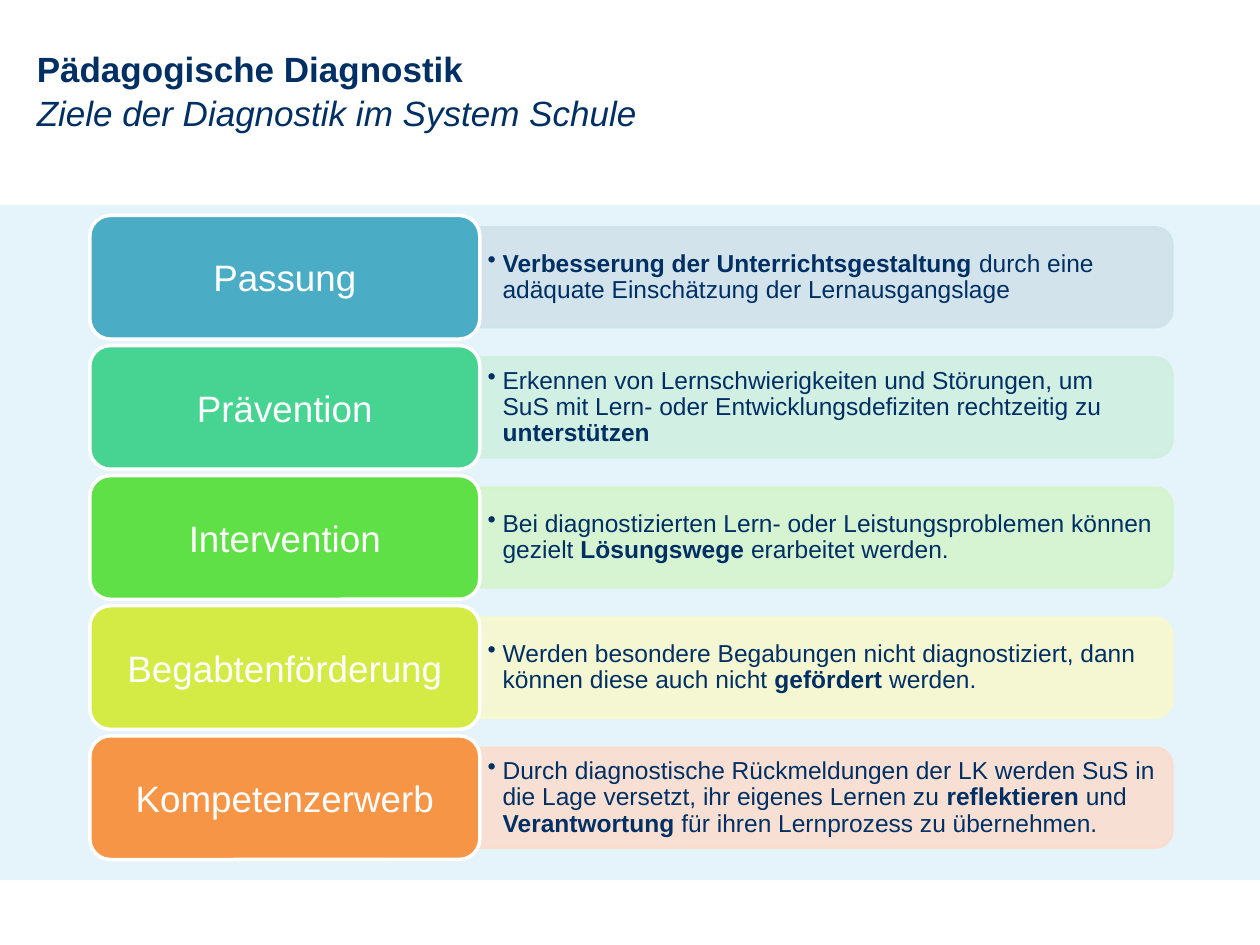
"""Build the slide on the goals of diagnostics in the school system."""
from lxml.etree import SubElement
from pptx import Presentation
from pptx.dml.color import RGBColor
from pptx.enum.shapes import MSO_SHAPE
from pptx.enum.text import MSO_ANCHOR, PP_ALIGN
from pptx.oxml.ns import qn
from pptx.util import Pt

NAVY, WHITE = "002F63", "FFFFFF"
FRAME = dict(margin_left=0, margin_top=0, margin_right=0, margin_bottom=0, word_wrap=True)
TITLE_FONT = dict(name="Arial", size=Pt(20))
GOAL_FONT = dict(name="Arial", size=Pt(21))
DETAIL_FONT = dict(name="Arial", size=Pt(14))

ROW_PITCH, FIRST_TOP = 74.35, 123.1
CARD_LEFT, CARD_WIDTH, CARD_HEIGHT = 51.3, 222.9, 70.7
PANEL_WIDTH, PANEL_HEIGHT = 395.4, 56.5
PANEL_LEFT = CARD_LEFT + CARD_WIDTH
CORNER = 0.167

GOALS = [
    ("Passung", "4AACC5", "D0E2EA", 348.5, [
        ("Verbesserung der Unterrichtsgestaltung ", True),
        ("durch eine adäquate Einschätzung der Lernausgangslage", False)]),
    ("Prävention", "47D391", "CFEFE0", 376, [
        ("Erkennen von Lernschwierigkeiten und Störungen, um SuS mit Lern- oder "
         "Entwicklungsdefiziten rechtzeitig zu ", False),
        ("unterstützen", True)]),
    ("Intervention", "5FE046", "D5F4CE", 384, [
        ("Bei diagnostizierten Lern- oder Leistungsproblemen können gezielt ", False),
        ("Lösungswege ", True),
        ("erarbeitet werden.", False)]),
    ("Begabtenförderung", "D4EB46", "F6F8CE", 372, [
        ("Werden besondere Begabungen nicht diagnostiziert, dann können diese auch nicht ", False),
        ("gefördert ", True),
        ("werden.", False)]),
    ("Kompetenzerwerb", "F79546", "FBDDCF", 384, [
        ("Durch diagnostische Rückmeldungen der LK werden SuS in die Lage versetzt, "
         "ihr eigenes Lernen zu ", False),
        ("reflektieren ", True),
        ("und ", False),
        ("Verantwortung ", True),
        ("für ihren Lernprozess zu übernehmen.", False)]),
]


def rgb(hex_code):
    """Turn a hex string into a colour."""
    return RGBColor.from_string(hex_code)


def apply(target, values):
    """Set each named value on the target."""
    for name, value in values.items():
        setattr(target, name, value)


def add_block(slide, kind, box, fill, line=None, opacity=100):
    """Add a filled preset shape, optionally outlined and translucent."""
    block = slide.shapes.add_shape(kind, *map(Pt, box))
    block.shadow.inherit = False
    block.fill.solid()
    block.fill.fore_color.rgb = rgb(fill)
    if opacity < 100:
        colour = block.fill._xPr.find(qn("a:solidFill"))[0]
        SubElement(colour, qn("a:alpha"), val=str(opacity * 1000))
    if line:
        block.line.color.rgb = rgb(line)
        block.line.width = Pt(2)
    else:
        block.line.fill.background()
    return block


def add_run(paragraph, text, font, colour, **emphasis):
    """Append formatted text to a paragraph."""
    run = paragraph.add_run()
    run.text = text
    apply(run.font, {**font, **emphasis})
    run.font.color.rgb = rgb(colour)


def add_frame(slide, box, anchor):
    """Add a wrapping text box without margins and return its frame."""
    frame = slide.shapes.add_textbox(*map(Pt, box)).text_frame
    apply(frame, {**FRAME, "vertical_anchor": anchor})
    return frame


def add_title(slide):
    """Add the two-line heading."""
    frame = add_frame(slide, (21, 27, 400, 50), MSO_ANCHOR.TOP)
    add_run(frame.paragraphs[0], "Pädagogische Diagnostik", TITLE_FONT, NAVY, bold=True)
    subtitle = frame.add_paragraph()
    subtitle.space_before = Pt(1)
    add_run(subtitle, "Ziele der Diagnostik im System Schule", TITLE_FONT, NAVY, italic=True)


def add_panel(slide, top, tint):
    """Add the pale panel, turned so that its right corners are round."""
    shift = (PANEL_WIDTH - PANEL_HEIGHT) / 2
    box = (PANEL_LEFT + shift, top - shift, PANEL_HEIGHT, PANEL_WIDTH)
    panel = add_block(slide, MSO_SHAPE.ROUND_2_SAME_RECTANGLE, box, tint, tint, 90)
    panel.adjustments[0] = CORNER
    panel.rotation = 90


def add_detail(slide, top, width, parts):
    """Add the bulleted explanation over its panel."""
    frame = add_frame(slide, (PANEL_LEFT + 3, top, width, PANEL_HEIGHT), MSO_ANCHOR.MIDDLE)
    detail = frame.paragraphs[0]
    properties = detail._p.get_or_add_pPr()
    apply_indent = {"marL": Pt(10), "indent": Pt(-8.6)}
    for name, value in apply_indent.items():
        properties.set(name, str(value))
    SubElement(properties, qn("a:buChar"), char="•")
    detail.line_spacing = Pt(15)
    for text, bold in parts:
        add_run(detail, text, DETAIL_FONT, NAVY, bold=bold)


def add_card(slide, top, goal, fill):
    """Add the rounded card that names a goal."""
    box = (CARD_LEFT, top, CARD_WIDTH, CARD_HEIGHT)
    card = add_block(slide, MSO_SHAPE.ROUNDED_RECTANGLE, box, fill, WHITE)
    card.adjustments[0] = CORNER
    apply(card.text_frame, {**FRAME, "vertical_anchor": MSO_ANCHOR.MIDDLE})
    label = card.text_frame.paragraphs[0]
    label.alignment = PP_ALIGN.CENTER
    add_run(label, goal, GOAL_FONT, WHITE)


def main():
    """Assemble and save the slide."""
    deck = Presentation()
    apply(deck, {"slide_width": Pt(720), "slide_height": Pt(540)})
    slide = deck.slides.add_slide(deck.slide_layouts[6])
    add_block(slide, MSO_SHAPE.RECTANGLE, (0, 117, 720, 386), "008BCF", opacity=10)
    add_title(slide)
    for row, (goal, fill, tint, width, parts) in enumerate(GOALS):
        card_top = FIRST_TOP + row * ROW_PITCH
        panel_top = card_top + (CARD_HEIGHT - PANEL_HEIGHT) / 2
        add_panel(slide, panel_top, tint)
        add_detail(slide, panel_top, width, parts)
        add_card(slide, card_top, goal, fill)
    deck.save("out.pptx")


if __name__ == "__main__":
    main()
